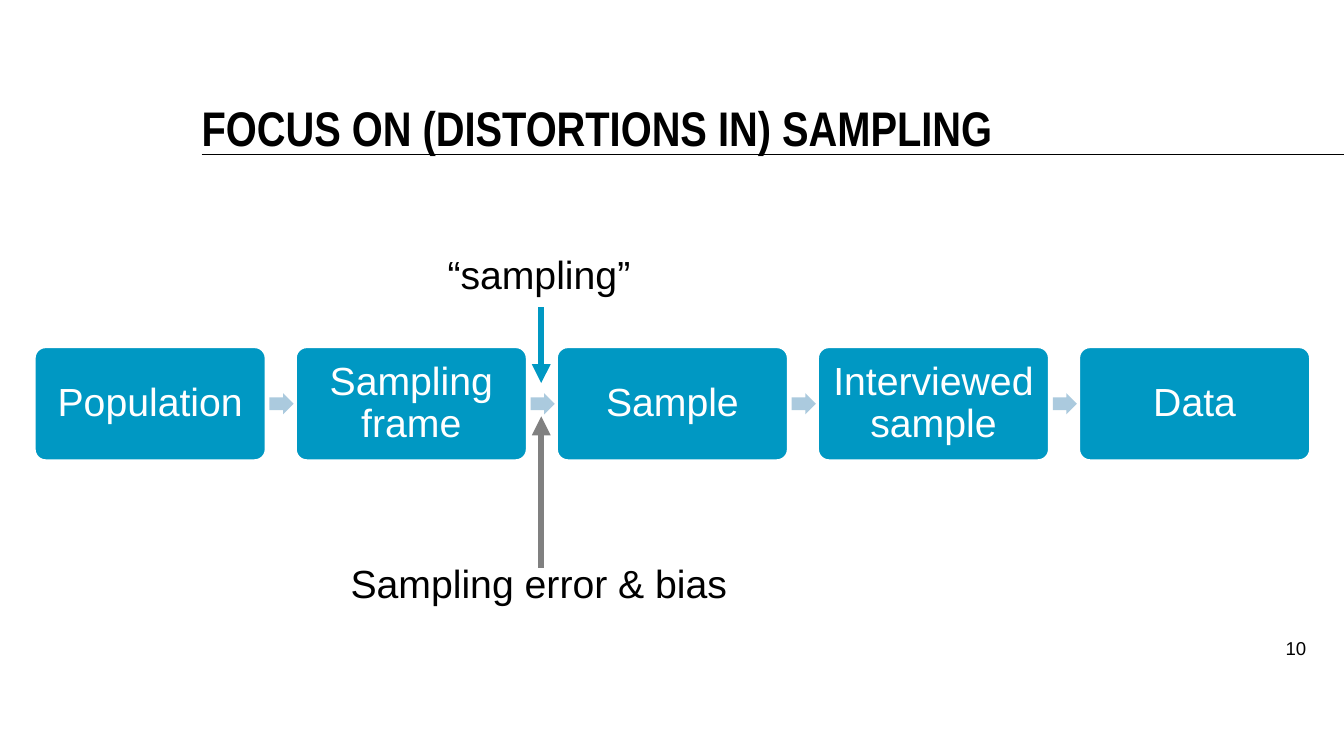
from dataclasses import dataclass

import lxml.etree
import pptx
import pptx.dml.color
import pptx.enum.shapes
import pptx.enum.text
import pptx.oxml.ns
import pptx.util

Pt = pptx.util.Pt
Align = pptx.enum.text.PP_ALIGN
Anchor = pptx.enum.text.MSO_ANCHOR
Preset = pptx.enum.shapes.MSO_SHAPE

BLACK, WHITE, GREY = "000000", "FFFFFF", "808080"
BLUE, PALE_BLUE = "0098C3", "ABCADE"

STAGES = ["Population", "Sampling frame", "Sample", "Interviewed sample", "Data"]
STAGE_LEFT, STAGE_TOP = 24.5, 247.7
STAGE_WIDTH, STAGE_HEIGHT = 165.6, 81.4
STAGE_PITCH = 186.5
STEP_OFFSET, STEP_WIDTH, STEP_HEIGHT = 168, 17.3, 15.1
SAMPLING_X = 386.6


@dataclass
class Label:
    text: str
    left: float
    top: float
    width: float
    height: float
    size: float = 28
    line_spacing: float = 33.3
    font: str = "Arial"
    bold: bool = False
    align: Align = Align.CENTER
    anchor: Anchor = Anchor.TOP
    insets: tuple[float, float, float, float] = (0, 3.6, 7.2, 3.6)


@dataclass
class Rule:
    start: tuple[float, float]
    end: tuple[float, float]
    color: str
    weight: float
    arrow: bool = False


LABELS = [
    Label("FOCUS ON (DISTORTIONS IN) SAMPLING", 144, 54, 792, 57.6, size=34.7,
          font="Arial Narrow", bold=True, align=Align.LEFT,
          anchor=Anchor.BOTTOM, insets=(0, 0, 0, 0)),
    Label("“sampling”", 306, 175.7, 164.9, 37.4),
    Label("Sampling error & bias", 227.5, 396, 321.8, 74.9),
    Label("10", 893.5, 447.1, 39.6, 37.4, size=13.3, line_spacing=20,
          align=Align.RIGHT, insets=(7.2, 3.6, 0, 3.6)),
]

RULES = [
    Rule((144, 110.2), (960, 110.2), BLACK, 1),
    Rule((SAMPLING_X, 219.6), (SAMPLING_X, 273.6), BLUE, 4.5, arrow=True),
    Rule((SAMPLING_X, 405.4), (SAMPLING_X, 297.4), GREY, 4.5, arrow=True),
]


def rgb(value: str) -> pptx.dml.color.RGBColor:
    return pptx.dml.color.RGBColor.from_string(value)


def write(frame, text: str, insets: tuple, anchor: Anchor, align: Align,
          spacing, font: str, size: float, color: str, bold: bool = False) -> None:
    """Fill a text frame with one formatted paragraph."""
    frame.word_wrap = True
    frame.vertical_anchor = anchor
    (frame.margin_left, frame.margin_top,
     frame.margin_right, frame.margin_bottom) = map(Pt, insets)
    paragraph = frame.paragraphs[0]
    paragraph.alignment = align
    paragraph.line_spacing = spacing
    run = paragraph.add_run()
    run.text = text
    run.font.name = font
    run.font.size = Pt(size)
    run.font.bold = bold
    run.font.color.rgb = rgb(color)


def add_label(slide, label: Label) -> None:
    box = slide.shapes.add_textbox(
        Pt(label.left), Pt(label.top), Pt(label.width), Pt(label.height))
    write(box.text_frame, label.text, label.insets, label.anchor, label.align,
          Pt(label.line_spacing), label.font, label.size, BLACK, label.bold)


def add_rule(slide, rule: Rule) -> None:
    line = slide.shapes.add_connector(
        pptx.enum.shapes.MSO_CONNECTOR.STRAIGHT,
        *map(Pt, rule.start), *map(Pt, rule.end))
    line.line.color.rgb = rgb(rule.color)
    line.line.width = Pt(rule.weight)
    properties = line._element.spPr
    qn = pptx.oxml.ns.qn
    if rule.arrow:
        lxml.etree.SubElement(properties.find(qn("a:ln")), qn("a:tailEnd"),
                              type="triangle")
    lxml.etree.SubElement(properties, qn("a:effectLst"))


def add_block(slide, preset: Preset, left: float, top: float, width: float,
              height: float, fill: str):
    """Add a flat filled shape without an outline."""
    block = slide.shapes.add_shape(preset, Pt(left), Pt(top), Pt(width), Pt(height))
    block.shadow.inherit = False
    block.fill.solid()
    block.fill.fore_color.rgb = rgb(fill)
    block.line.fill.background()
    return block


def add_stage(slide, text: str, left: float) -> None:
    stage = add_block(slide, Preset.ROUNDED_RECTANGLE, left, STAGE_TOP,
                      STAGE_WIDTH, STAGE_HEIGHT, BLUE)
    stage.adjustments[0] = 0.1
    stage.line.color.rgb = rgb(WHITE)
    stage.line.width = Pt(2)
    write(stage.text_frame, text, (8, 8, 8, 8), Anchor.MIDDLE, Align.CENTER,
          0.9, "Arial", 28, WHITE)


def add_step(slide, left: float) -> None:
    step = add_block(slide, Preset.RIGHT_ARROW, left,
                     STAGE_TOP + (STAGE_HEIGHT - STEP_HEIGHT) / 2,
                     STEP_WIDTH, STEP_HEIGHT, PALE_BLUE)
    step.adjustments[0] = 0.6
    step.adjustments[1] = 0.5


def main() -> None:
    deck = pptx.Presentation()
    deck.slide_width, deck.slide_height = Pt(960), Pt(540)
    slide = deck.slides.add_slide(deck.slide_layouts[6])
    for index, text in enumerate(STAGES):
        left = STAGE_LEFT + index * STAGE_PITCH
        add_stage(slide, text, left)
        if index < len(STAGES) - 1:
            add_step(slide, left + STEP_OFFSET)
    for rule in RULES:
        add_rule(slide, rule)
    for label in LABELS:
        add_label(slide, label)
    deck.save("out.pptx")


if __name__ == "__main__":
    main()
